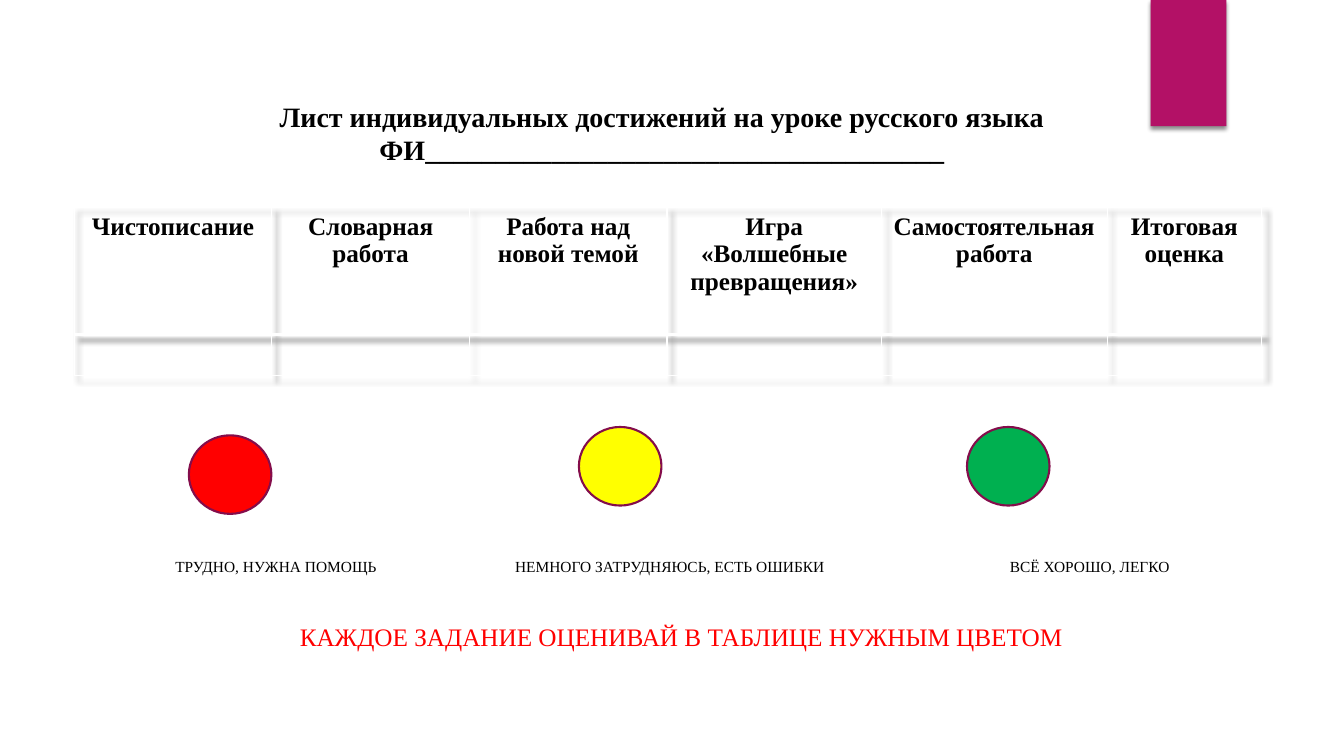
"""Build the self-assessment sheet slide for a Russian language lesson."""
from dataclasses import dataclass

from lxml import etree
from pptx import Presentation
from pptx.dml.color import RGBColor
from pptx.enum.shapes import MSO_SHAPE
from pptx.enum.text import MSO_ANCHOR, MSO_AUTO_SIZE, PP_ALIGN
from pptx.oxml.ns import qn
from pptx.util import Cm, Pt

RECT, OVAL = MSO_SHAPE.RECTANGLE, MSO_SHAPE.OVAL
LEFT, CENTER = PP_ALIGN.LEFT, PP_ALIGN.CENTER
BOTTOM, TOP = MSO_ANCHOR.BOTTOM, MSO_ANCHOR.TOP
NO_FIT = MSO_AUTO_SIZE.NONE


@dataclass(frozen=True)
class Theme:
    font: str = "Times New Roman"
    text: str = "000000"
    accent: str = "B31166"
    outline: str = "840D4B"
    border: str = "FFFFFF"
    red: str = "FF0000"
    yellow: str = "FFFF00"
    green: str = "00B050"
    title: int = 20
    body: int = 18
    legend: int = 11


T = Theme()


def add_run(p, text, size, color=T.text, bold=False):
    r = p.add_run()
    r.text = text
    r.font.name = T.font
    r.font.size = Pt(size)
    r.font.bold = bold
    r.font.color.rgb = RGBColor.from_string(color)


def add_shadow(props, index, blur, dist, angle, alpha):
    effects = etree.Element(qn("a:effectLst"))
    shadow = etree.SubElement(
        effects, qn("a:outerShdw"), blurRad=str(Pt(blur)), dist=str(Pt(dist)),
        dir=str(angle * 60000), algn="tl", rotWithShape="0")
    color = etree.SubElement(shadow, qn("a:srgbClr"), val=T.text)
    etree.SubElement(color, qn("a:alpha"), val=str(alpha * 1000))
    props.insert(index, effects)


prs = Presentation()
prs.slide_width, prs.slide_height = Cm(33.87), Cm(19.05)
s = prs.slides.add_slide(prs.slide_layouts[0])

ribbon = s.shapes.add_shape(RECT, Cm(29), 0, Cm(1.91), Cm(3.18))
ribbon.fill.solid()
ribbon.fill.fore_color.rgb = RGBColor.from_string(T.accent)
ribbon.line.fill.background()
add_shadow(ribbon._element.spPr, len(ribbon._element.spPr), 3, 2, 90, 45)

title = s.shapes.title
title.left, title.top, title.width, title.height = Cm(1.87), Cm(2.27), Cm(29.62), Cm(2.05)
tf = title.text_frame
tf.auto_size, tf.vertical_anchor = NO_FIT, BOTTOM
p = tf.paragraphs[0]
p.alignment = CENTER
add_run(p, "Лист индивидуальных достижений на уроке русского языка", T.title, bold=True)
p.add_line_break()
add_run(p, "ФИ" + "_" * 37, T.title, bold=True)

HEADERS = ["Чистописание", "Словарная работа", "Работа над новой темой",
           "Игра «Волшебные превращения»", "Самостоятельная работа", "Итоговая оценка"]
COL_WIDTHS = [4.98, 4.98, 4.98, 5.4, 5.69, 3.89]
ROW_HEIGHTS = [3.2, 1.04]
frame = s.shapes.add_table(len(ROW_HEIGHTS), len(HEADERS), Cm(1.87), Cm(5.23),
                           Cm(sum(COL_WIDTHS)), Cm(sum(ROW_HEIGHTS)))
table = frame.table
table.horz_banding = False
add_shadow(table._tbl.tblPr, 0, 4, 4, 45, 40)
for col, width in zip(table.columns, COL_WIDTHS):
    col.width = Cm(width)
for row, height in zip(table.rows, ROW_HEIGHTS):
    row.height = Cm(height)
for row_no, row in enumerate(table.rows):
    for cell, header in zip(row.cells, HEADERS):
        tcPr = cell._tc.get_or_add_tcPr()
        for side in ("lnL", "lnR", "lnT", "lnB"):
            divider = (row_no, side) in ((0, "lnB"), (1, "lnT"))
            ln = etree.SubElement(tcPr, qn("a:" + side), w=str(Pt(3 if divider else 1)))
            fill = etree.SubElement(ln, qn("a:solidFill"))
            etree.SubElement(fill, qn("a:srgbClr"), val=T.border)
        cell.fill.background()
        cell.margin_left = cell.margin_right = Cm(0.18)
        if row_no == 0:
            p = cell.text_frame.paragraphs[0]
            p.alignment = CENTER
            add_run(p, header, T.body, bold=True)

LEGEND = [
    (4.76, 10.97, T.red, 4.42, 6, "ТРУДНО, НУЖНА ПОМОЩЬ"),
    (14.59, 10.76, T.yellow, 12.98, 9, "НЕМНОГО ЗАТРУДНЯЮСЬ, ЕСТЬ ОШИБКИ"),
    (24.37, 10.76, T.green, 25.45, 5, "ВСЁ ХОРОШО, ЛЕГКО"),
]
for left, top, color, label_left, label_width, label in LEGEND:
    circle = s.shapes.add_shape(OVAL, Cm(left), Cm(top), Cm(2.08), Cm(1.98))
    circle.shadow.inherit = False
    circle.fill.solid()
    circle.fill.fore_color.rgb = RGBColor.from_string(color)
    circle.line.color.rgb = RGBColor.from_string(T.outline)
    circle.line.width = Pt(1.5)
    box = s.shapes.add_textbox(Cm(label_left), Cm(13.92), Cm(label_width), Cm(0.7))
    tf = box.text_frame
    tf.word_wrap = True
    tf.margin_left = tf.margin_right = 0
    add_run(tf.paragraphs[0], label, T.legend)

hint = s.placeholders[1]
hint.left, hint.top, hint.width, hint.height = Cm(7.3), Cm(15.53), Cm(24.93), Cm(1)
tf = hint.text_frame
tf.auto_size, tf.vertical_anchor = NO_FIT, TOP
p = tf.paragraphs[0]
p.alignment, p.space_before = LEFT, Pt(0)
add_run(p, "КАЖДОЕ ЗАДАНИЕ ОЦЕНИВАЙ В ТАБЛИЦЕ НУЖНЫМ ЦВЕТОМ", T.body, T.red)

prs.save("out.pptx")
